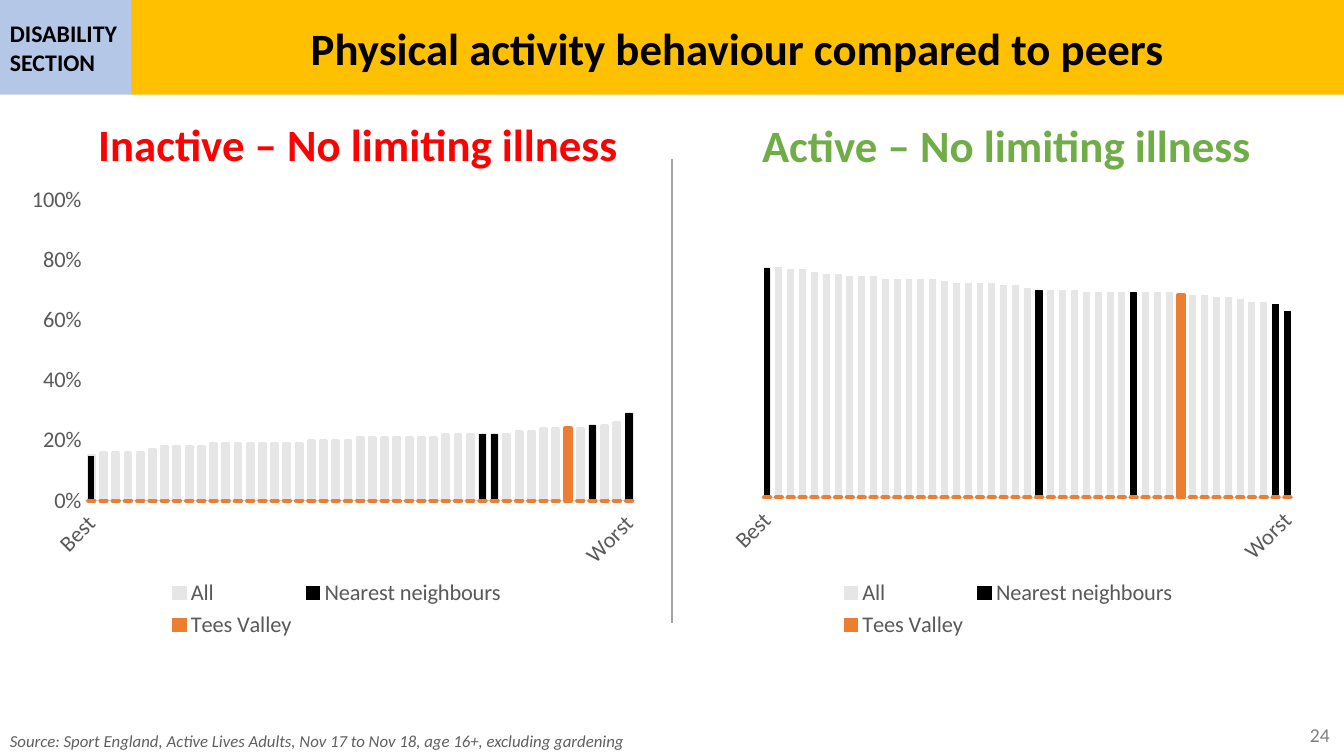
import dataclasses

import pptx
import pptx.chart.data
import pptx.dml.color
import pptx.enum.chart
import pptx.enum.shapes
import pptx.enum.text
import pptx.oxml
import pptx.oxml.ns
import pptx.util
from lxml import etree

qn = pptx.oxml.ns.qn
Pt = pptx.util.Pt
PP = pptx.enum.text.PP_ALIGN
ANCHOR = pptx.enum.text.MSO_ANCHOR
XL = pptx.enum.chart


@dataclasses.dataclass(frozen=True)
class Theme:
    font: str = "Calibri"
    black: str = "000000"
    band: str = "FFC000"
    tag: str = "B4C7E7"
    inactive: str = "FF0000"
    active: str = "70AD47"
    rule: str = "A5A5A5"
    axis: str = "D9D9D9"
    label: str = "595959"
    source: str = "5F5F5F"
    page: str = "808080"
    every_area: str = "E7E6E6"
    tees: str = "ED7D31"
    title_size: int = 32
    tag_size: int = 17
    label_size: int = 16
    page_size: int = 14
    source_size: int = 12


def rgb(value):
    return pptx.dml.color.RGBColor.from_string(value)


def assign(target, **values):
    for name, value in values.items():
        setattr(target, name, value)


class Deck:
    """Holds the theme and the current slide; boxes are percentages of the slide."""

    def __init__(self, theme):
        self.theme = theme
        self.prs = pptx.Presentation()
        assign(self.prs, slide_width=pptx.util.Inches(13.33),
               slide_height=pptx.util.Inches(7.5))
        self.s = self.prs.slides.add_slide(self.prs.slide_layouts[5])

    def place(self, x, y, w, h):
        sizes = (self.prs.slide_width, self.prs.slide_height) * 2
        return [round(size * share / 100) for size, share in zip(sizes, (x, y, w, h))]

    def font(self, font, size, color, **style):
        assign(font, name=self.theme.font, size=Pt(size), **style)
        font.color.rgb = rgb(color)

    def fill_text(self, sp, text, size, color, align=PP.LEFT, anchor=ANCHOR.MIDDLE, **style):
        tf = sp.text_frame
        assign(tf, word_wrap=True, vertical_anchor=anchor,
               auto_size=pptx.enum.text.MSO_AUTO_SIZE.NONE)
        p = tf.paragraphs[0]
        p.alignment = align
        r = p.add_run()
        r.text = text
        self.font(r.font, size, color, **style)

    def title(self, box, text):
        sp = self.s.shapes.title
        assign(sp, **dict(zip(("left", "top", "width", "height"), self.place(*box))))
        sp.fill.solid()
        sp.fill.fore_color.rgb = rgb(self.theme.band)
        self.fill_text(sp, text, self.theme.title_size, self.theme.black, PP.CENTER, bold=True)

    def tag(self, box, text):
        sp = self.s.shapes.add_shape(pptx.enum.shapes.MSO_SHAPE.RECTANGLE, *self.place(*box))
        sp.shadow.inherit = False
        sp.fill.solid()
        sp.fill.fore_color.rgb = rgb(self.theme.tag)
        sp.line.fill.background()
        self.fill_text(sp, text, self.theme.tag_size, self.theme.black, bold=True)

    def text(self, box, text, size, color, **style):
        sp = self.s.shapes.add_textbox(*self.place(*box))
        self.fill_text(sp, text, size, color, **style)

    def divider(self, x, top, bottom):
        line = self.s.shapes.add_connector(pptx.enum.shapes.MSO_CONNECTOR.STRAIGHT,
                                           *self.place(x, top, x, bottom))
        line.line.width = Pt(2)
        line.line.color.rgb = rgb(self.theme.rule)
        etree.SubElement(line._element.spPr, qn("a:effectLst"))

    def chart(self, box, plot, cats, series, num_format, outline, reverse, scale):
        data = pptx.chart.data.CategoryChartData(number_format=num_format)
        data.categories = cats
        for name, values, _ in series:
            data.add_series(name, values)
        chart = self.s.shapes.add_chart(XL.XL_CHART_TYPE.COLUMN_CLUSTERED,
                                        *self.place(*box), data).chart
        assign(chart, has_title=False, has_legend=True)
        self.font(chart.font, self.theme.page_size, self.theme.black)
        assign(chart.plots[0], gap_width=100, overlap=100, vary_by_categories=False)

        # Bars
        for bars, (_, _, color), width in zip(chart.plots[0].series, series, outline):
            bars.invert_if_negative = False
            bars.format.fill.solid()
            bars.format.fill.fore_color.rgb = rgb(color)
            if width:
                bars.format.line.width = Pt(width)
                bars.format.line.color.rgb = rgb(color)

        # Axes
        cat, val = chart.category_axis, chart.value_axis
        none = XL.XL_TICK_MARK.NONE
        for axis in (cat, val):
            assign(axis, has_major_gridlines=False, major_tick_mark=none, minor_tick_mark=none)
            self.font(axis.tick_labels.font, self.theme.label_size, self.theme.label)
        assign(cat, tick_label_position=XL.XL_TICK_LABEL_POSITION.LOW, reverse_order=reverse)
        cat.format.line.width = Pt(0.75)
        cat.format.line.color.rgb = rgb(self.theme.axis)
        cat._element.find(qn("c:txPr")).find(qn("a:bodyPr")).set("rot", "-2700000")
        skip = etree.Element(qn("c:tickLblSkip"), val="1")
        cat._element.find(qn("c:noMultiLvlLbl")).addprevious(skip)
        assign(val, minimum_scale=0, **scale)
        assign(val.tick_labels, number_format=num_format, number_format_is_linked=False)
        val.format.line.fill.background()

        # Legend without the second series
        assign(chart.legend, position=XL.XL_LEGEND_POSITION.BOTTOM, include_in_layout=False)
        self.font(chart.legend.font, self.theme.label_size, self.theme.label)
        entry = etree.Element(qn("c:legendEntry"))
        etree.SubElement(entry, qn("c:idx"), val="1")
        etree.SubElement(entry, qn("c:delete"), val="1")
        chart.legend._element.find(qn("c:legendPos")).addnext(entry)

        # Inner plot position
        area = chart._chartSpace.chart.plotArea
        for old in area.findall(qn("c:layout")):
            area.remove(old)
        layout = etree.Element(qn("c:layout"))
        area.insert(0, layout)
        manual = etree.SubElement(layout, qn("c:manualLayout"))
        settings = dict(layoutTarget="inner", xMode="edge", yMode="edge",
                        **dict(zip("xywh", map(str, plot))))
        for name, value in settings.items():
            etree.SubElement(manual, qn("c:" + name), val=value)


def peer_series(theme, values, neighbours, tees):
    """Each highlighted series repeats the full ranking at its own positions."""
    def pick(positions, other):
        return [v if i in positions else other for i, v in enumerate(values)]
    return [("All", values, theme.every_area),
            ("Series 2", pick((0, len(values) - 1), None), theme.black),
            ("Nearest neighbours", pick(neighbours, 0), theme.black),
            ("Tees Valley", pick((tees,), 0), theme.tees)]


def ranking(runs):
    return [value for value, count in runs for _ in range(count)]


def main():
    theme = Theme()
    deck = Deck(theme)

    # Header
    deck.title((9.75, 0, 90.25, 12.53), "Physical activity behaviour compared to peers")
    deck.tag((0, 0, 9.75, 12.53), "DISABILITY SECTION")

    # Chart headings and divider
    for x, y, text, color in ((1.65, 14.8, "Inactive – No limiting illness", theme.inactive),
                              (49.89, 14.93, "Active – No limiting illness", theme.active)):
        deck.text((x, y, 50, 8.53), text, theme.title_size, color,
                  align=PP.CENTER, anchor=ANCHOR.TOP, bold=True)
    deck.divider(50, 21.07, 82.4)

    # Rankings as (value, number of areas)
    inactive = [v / 100 for v in ranking((
        (15, 1), (16, 4), (17, 1), (18, 4), (19, 8), (20, 4), (21, 7),
        (22, 6), (23, 2), (24, 4), (25, 2), (26, 1), (29, 1)))]
    active = ranking((
        (81, 1), (84, 1), (85, 2), (86, 1), (87, 2), (88, 3), (89, 8), (90, 4), (91, 1),
        (92, 2), (93, 4), (94, 1), (95, 5), (96, 3), (97, 2), (98, 1), (99, 2), (100, 2)))
    blanks = [""] * (len(active) - 2)

    # Charts
    deck.chart((1.43, 22.13, 47.26, 62.93), (0.104, 0.069, 0.866, 0.632),
               ["Best", *blanks, "Worst"],
               peer_series(theme, inactive, (32, 33, 41, 44), 39),
               "0%", (2, 0, 1, 3), False, dict(maximum_scale=1, major_unit=0.2))
    deck.chart((51.39, 22.13, 47.26, 62.93), (0.111, 0.037, 0.838, 0.657),
               ["Worst", *blanks, "Best"],
               peer_series(theme, active, (0, 1, 13, 21), 9),
               "0.0%", (0.75, 0, 1, 3), True,
               dict(maximum_scale=136, major_unit=27, visible=False))

    # Footer
    deck.text((0, 96, 74.8, 4),
              "Source: Sport England, Active Lives Adults, Nov 17 to Nov 18, "
              "age 16+, excluding gardening",
              theme.source_size, theme.source, anchor=ANCHOR.TOP, italic=True)
    deck.text((77.19, 94.53, 22.5, 5.33), "24", theme.page_size, theme.page, align=PP.RIGHT)
    deck.prs.save("out.pptx")


if __name__ == "__main__":
    main()
